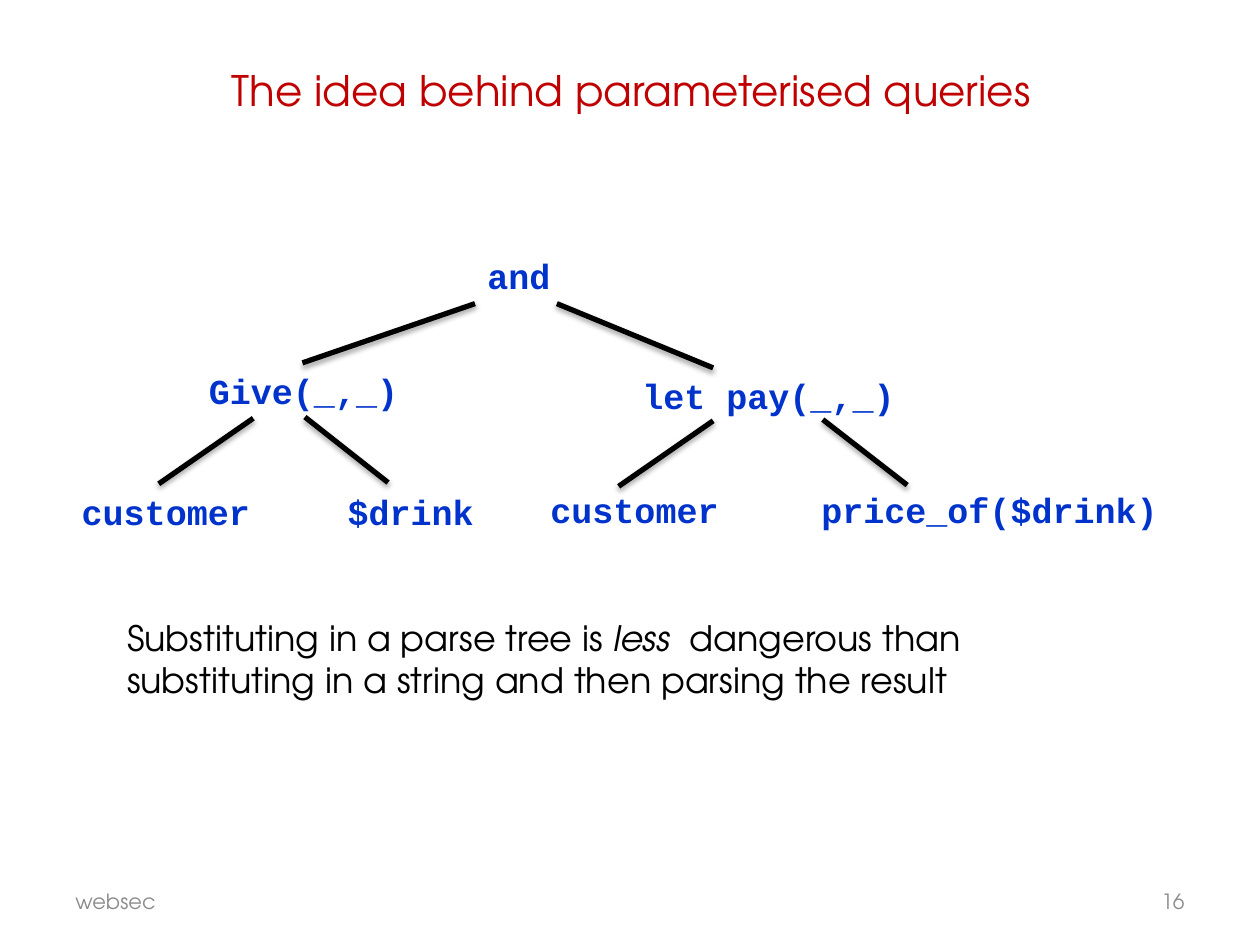
from dataclasses import dataclass
from typing import Any

from lxml import etree
from pptx import Presentation
from pptx.dml.color import RGBColor
from pptx.enum.shapes import MSO_CONNECTOR
from pptx.enum.text import MSO_ANCHOR, PP_ALIGN
from pptx.oxml.ns import qn
from pptx.util import Inches, Pt

RED = RGBColor(0xC0, 0x00, 0x00)
BLUE = RGBColor(0x00, 0x33, 0xCC)
GREY = RGBColor(0x8C, 0x8C, 0x8C)
BLACK = RGBColor(0x00, 0x00, 0x00)
LEFT, CENTER, RIGHT = PP_ALIGN.LEFT, PP_ALIGN.CENTER, PP_ALIGN.RIGHT
TOP, MIDDLE = MSO_ANCHOR.TOP, MSO_ANCHOR.MIDDLE
STRAIGHT = MSO_CONNECTOR.STRAIGHT

COLUMNS, ROWS = 100, 75
NODE_HEIGHT = 4.4
CHARACTER_WIDTH = 1.67
NODE_PADDING = 2


@dataclass
class TreeSlide:
    """Draws slide elements on a grid of 100 columns by 75 rows."""

    deck: Any
    slide: Any
    prose_font: str = "TeX Gyre Adventor"
    code_font: str = "Courier New"

    def across(self, columns):
        return round(self.deck.slide_width * columns / COLUMNS)

    def down(self, rows):
        return round(self.deck.slide_height * rows / ROWS)

    def place(self, left, top, width, height):
        return self.across(left), self.down(top), self.across(width), self.down(height)

    def format_runs(self, paragraph, size, color, font, bold=False):
        for run in paragraph.runs:
            run.font.size = Pt(size)
            run.font.name = font
            run.font.bold = bold
            run.font.color.rgb = color

    def title(self, text, area):
        heading = self.slide.shapes.title
        heading.left, heading.top, heading.width, heading.height = self.place(*area)
        heading.text_frame.text = text
        heading.text_frame.vertical_anchor = MIDDLE
        paragraph = heading.text_frame.paragraphs[0]
        paragraph.alignment = CENTER
        self.format_runs(paragraph, 24, RED, self.prose_font)

    def text_frame(self, area, wrap, anchor=TOP):
        frame = self.slide.shapes.add_textbox(*self.place(*area)).text_frame
        frame.word_wrap = wrap
        frame.vertical_anchor = anchor
        return frame

    def footer(self, text, left, alignment):
        frame = self.text_frame((left, 69.5, 23.3, 4), True, MIDDLE)
        frame.text = text
        frame.paragraphs[0].alignment = alignment
        self.format_runs(frame.paragraphs[0], 12, GREY, self.prose_font)

    def node(self, text, left, top):
        width = len(text) * CHARACTER_WIDTH + NODE_PADDING
        frame = self.text_frame((left, top, width, NODE_HEIGHT), False)
        frame.text = text
        self.format_runs(frame.paragraphs[0], 20, BLUE, self.code_font, True)

    def branch(self, start_column, start_row, end_column, end_row):
        line = self.slide.shapes.add_connector(
            STRAIGHT,
            self.across(start_column), self.down(start_row),
            self.across(end_column), self.down(end_row),
        )
        line.line.color.rgb = BLACK
        line.line.width = Pt(3)
        effects = etree.SubElement(line.line._get_or_add_ln().getparent(), qn("a:effectLst"))
        shadow = etree.SubElement(
            effects, qn("a:outerShdw"), blurRad=str(Pt(3.1)), dist=str(Pt(1.8)),
            dir="5400000", rotWithShape="0",
        )
        tint = etree.SubElement(shadow, qn("a:srgbClr"), val=str(BLACK))
        etree.SubElement(tint, qn("a:alpha"), val="35000")

    def statement(self, lines, area):
        frame = self.text_frame(area, False)
        for index, pieces in enumerate(lines):
            paragraph = frame.add_paragraph() if index else frame.paragraphs[0]
            paragraph.alignment = LEFT
            for text, italic in pieces:
                run = paragraph.add_run()
                run.text = text
                run.font.italic = italic
            self.format_runs(paragraph, 20, BLACK, self.prose_font)


def main():
    deck = Presentation()
    deck.slide_width, deck.slide_height = Inches(10), Inches(7.5)
    page = TreeSlide(deck, deck.slides.add_slide(deck.slide_layouts[5]))

    page.title("The idea behind parameterised queries", (5.1, 2.1, 90, 10.1))
    page.footer("websec", 5, LEFT)
    page.footer("16", 71.7, RIGHT)

    parse_tree = [
        ("and", 37.7, 19.7),
        ("Give(_,_)", 15.6, 28.8),
        ("let pay(_,_)", 50, 29.2),
        ("customer", 5.5, 38.4),
        ("$drink", 26.6, 38.4),
        ("customer", 42.7, 38.3),
        ("price_of($drink)", 64.2, 38.3),
    ]
    for term, left, top in parse_tree:
        page.node(term, left, top)

    branches = [
        (37.7, 24.1, 24, 28.8),
        (44.2, 24.1, 56.6, 29.2),
        (20.1, 33.2, 12.6, 38.4),
        (24.2, 33.1, 30.8, 38.3),
        (56.6, 33.4, 49.1, 38.6),
        (65.3, 33.3, 72, 38.5),
    ]
    for ends in branches:
        page.branch(*ends)

    conclusion = [
        [("Substituting in a parse tree is ", False), ("less ", True), (" dangerous than", False)],
        [("substituting in a string and then parsing the result", False)],
    ]
    page.statement(conclusion, (9.1, 48.4, 71.2, 7.7))
    deck.save("out.pptx")


if __name__ == "__main__":
    main()
